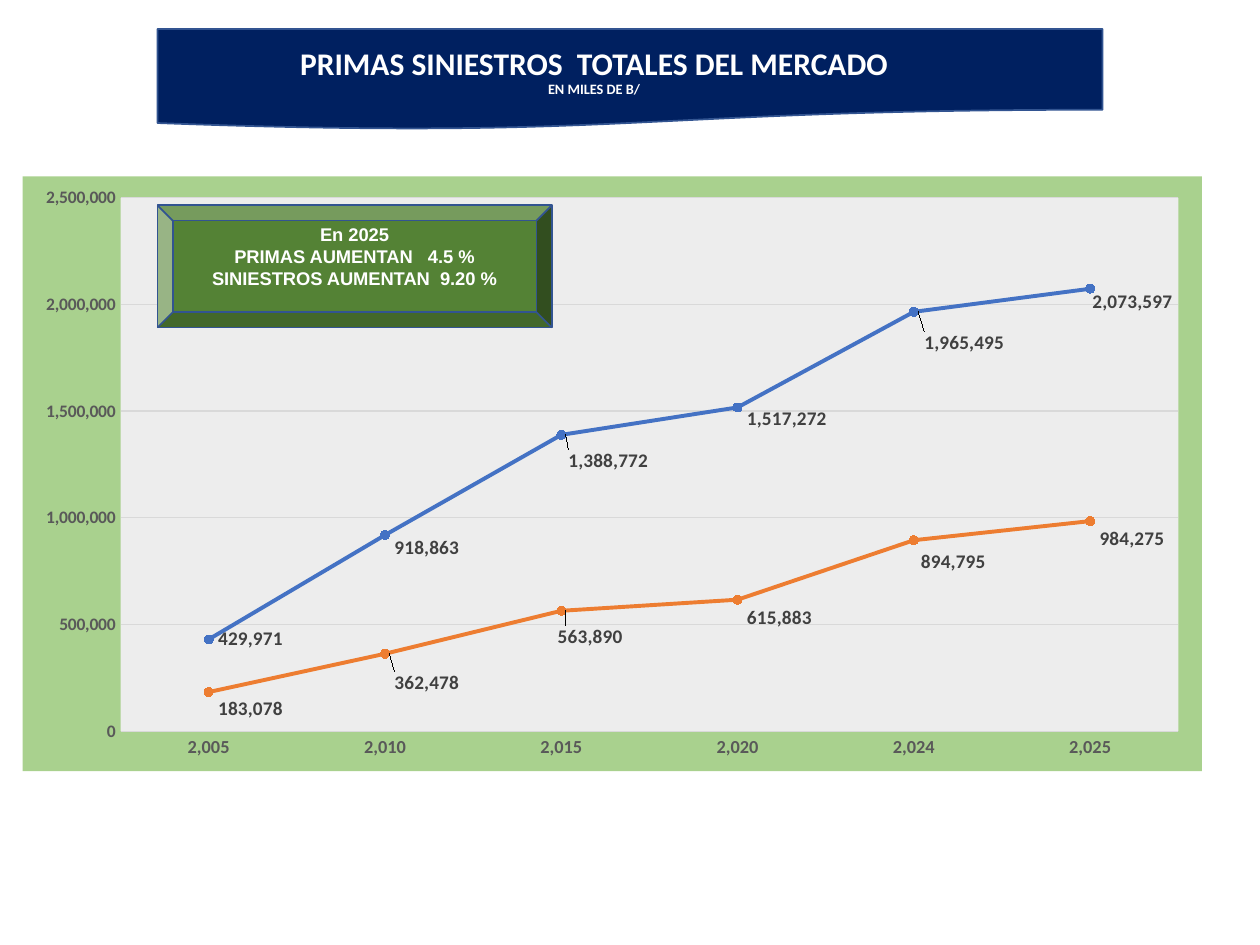
from lxml import etree
from pptx import Presentation
from pptx.chart.data import CategoryChartData
from pptx.dml.color import RGBColor
from pptx.enum.chart import (XL_CHART_TYPE, XL_LABEL_POSITION,
                             XL_MARKER_STYLE, XL_TICK_MARK)
from pptx.enum.shapes import MSO_SHAPE
from pptx.enum.text import MSO_ANCHOR, PP_ALIGN
from pptx.oxml.ns import qn
from pptx.util import Inches, Pt

LINES = XL_CHART_TYPE.LINE_MARKERS
RIGHT = XL_LABEL_POSITION.RIGHT
CIRCLE = XL_MARKER_STYLE.CIRCLE
NO_TICK = XL_TICK_MARK.NONE
WAVE, BEVEL = MSO_SHAPE.FLOWCHART_DOCUMENT, MSO_SHAPE.BEVEL
MIDDLE, CENTER = MSO_ANCHOR.MIDDLE, PP_ALIGN.CENTER

NAVY = RGBColor(0x00, 0x20, 0x60)
EDGE = RGBColor(0x32, 0x54, 0x91)
GREEN = RGBColor(0x54, 0x82, 0x35)
LIME = RGBColor(0xA9, 0xD1, 0x8E)
PALE = RGBColor(0xED, 0xED, 0xED)
GRID = RGBColor(0xD9, 0xD9, 0xD9)
GRAY = RGBColor(0x59, 0x59, 0x59)
DARK = RGBColor(0x40, 0x40, 0x40)
BLUE = RGBColor(0x44, 0x72, 0xC4)
ORANGE = RGBColor(0xED, 0x7D, 0x31)
WHITE = RGBColor(0xFF, 0xFF, 0xFF)

WIDE, HIGH = 9.36, 4.72  # chart size in inches
COMMAS = "#,##0"


def write(par, text, size, font="Calibri", color=WHITE):
    par.alignment = CENTER
    run = par.add_run()
    run.text = text
    run.font.name, run.font.size, run.font.bold = font, Pt(size), True
    run.font.color.rgb = color


def place(parent, spot, **parts):
    """Put a manual layout in a chart part, at the given child index."""
    for old in parent.findall(qn("c:layout")):
        parent.remove(old)
    layout = etree.Element(qn("c:layout"))
    manual = etree.SubElement(layout, qn("c:manualLayout"))
    for name, value in parts.items():
        etree.SubElement(manual, qn("c:" + name)).set("val", str(value))
    parent.insert(spot, layout)


prs = Presentation()
prs.slide_width, prs.slide_height = Inches(10), Inches(7.5)
slide = prs.slides.add_slide(prs.slide_layouts[5])
shapes = slide.shapes

# Banner and callout shapes
panels = []
for kind, fill, box in (
    (WAVE, NAVY, (1.25, 0.23, 7.5, 0.8)),
    (BEVEL, GREEN, (1.25, 1.63, 3.13, 0.97)),
):
    panel = shapes.add_shape(kind, *map(Inches, box))
    panel.shadow.inherit = False
    panel.fill.solid()
    panel.fill.fore_color.rgb = fill
    panel.line.color.rgb = EDGE
    panel.line.width = Pt(1)
    panels.append(panel)
callout = panels[1]

# Title, in front of the banner
title = shapes.title
title.left, title.top = Inches(1.54), Inches(0.23)
title.width, title.height = Inches(6.47), Inches(0.8)
shapes._spTree.append(title._element)
frame = title.text_frame
frame.word_wrap = True
frame.vertical_anchor = MIDDLE
frame.margin_right, frame.margin_bottom = Inches(0.22), Inches(0.15)
par = frame.paragraphs[0]
par.line_spacing = 0.9
write(par, "PRIMAS SINIESTROS  TOTALES DEL MERCADO", 18)
par.add_line_break()
write(par, "EN MILES DE B/", 8.2)

# Line chart; each label has a shift in inches from its default place
rows = (
    ("Series 1", BLUE,
     (429971, 918863, 1388772, 1517272, 1965495, 2073597),
     ((0, 0), (0, 0.1), (-0.02, 0.21), (0, 0.09), (0.01, 0.25), (-0.06, 0.11))),
    ("Series 2", ORANGE,
     (183078, 362478, 563890, 615883, 894795, 984275),
     ((0, 0.13), (0, 0.23), (-0.1, 0.21), (0, 0.14), (-0.02, 0.17), (0, 0.14))),
)
data = CategoryChartData(number_format=COMMAS)
data.categories = (2005, 2010, 2015, 2020, 2024, 2025)
data.categories.number_format = COMMAS
for name, color, values, shifts in rows:
    data.add_series(name, values)
holder = shapes.add_chart(LINES, Inches(0.18), Inches(1.4),
                          Inches(WIDE), Inches(HIGH), data)
chart = holder.chart
chart.has_legend = chart.has_title = False
chart.font.name, chart.font.size = "Calibri", Pt(10)
plot = chart.plots[0]
plot.vary_by_categories = False

# Chart and plot backgrounds
area = chart._chartSpace.chart.plotArea
place(area, 0, layoutTarget="inner", xMode="edge", yMode="edge",
      x=0.083, y=0.036, w=0.897, h=0.897)
for parent, color in ((area, PALE), (chart._chartSpace, LIME)):
    props = etree.Element(qn("c:spPr"))
    solid = etree.SubElement(props, qn("a:solidFill"))
    etree.SubElement(solid, qn("a:srgbClr")).set("val", str(color))
    line = etree.SubElement(props, qn("a:ln"))
    etree.SubElement(line, qn("a:noFill"))
    if parent is area:
        parent.append(props)
    else:
        chart._chartSpace.chart.addnext(props)

# Axes
years, amounts = chart.category_axis, chart.value_axis
for axis, size in ((years, 10.5), (amounts, 10)):
    axis.major_tick_mark = axis.minor_tick_mark = NO_TICK
    labels = axis.tick_labels
    labels.number_format, labels.number_format_is_linked = COMMAS, False
    font = labels.font
    font.name, font.size, font.bold = "Calibri", Pt(size), True
    font.color.rgb = GRAY
amounts.minimum_scale, amounts.maximum_scale = 0, 2500000
amounts.major_unit = 500000
amounts.format.line.fill.background()
for line in (years.format.line, amounts.major_gridlines.format.line):
    line.color.rgb = GRID
    line.width = Pt(0.75)

# Series and their labels
for series, (name, color, values, shifts) in zip(plot.series, rows):
    series.smooth = False
    series.format.line.color.rgb = color
    series.format.line.width = Pt(2.25)
    marker = series.marker
    marker.style, marker.size = CIRCLE, 5
    marker.format.fill.solid()
    marker.format.fill.fore_color.rgb = color
    marker.format.line.color.rgb = color
    labels = series.data_labels
    labels.show_value, labels.position = True, RIGHT
    labels.number_format, labels.number_format_is_linked = COMMAS, False
    tags = [series.points[i].data_label for i in range(len(values))]
    for tag in [labels] + tags:
        tag.position = RIGHT
        font = tag.font
        font.name, font.size, font.bold = "Calibri", Pt(11), True
        font.color.rgb = DARK
    nodes = labels._element.findall(qn("c:dLbl"))
    for node, (right, down) in zip(nodes, shifts):
        place(node, 1, x=round(right / WIDE, 3), y=round(down / HIGH, 3))

# Callout, in front of the chart
shapes._spTree.append(callout._element)
frame = callout.text_frame
frame.word_wrap = True
frame.vertical_anchor = MIDDLE
frame.margin_bottom = Inches(0.21)
for i, text in enumerate(("En 2025", "PRIMAS AUMENTAN   4.5 %",
                          "SINIESTROS AUMENTAN  9.20 %")):
    par = frame.add_paragraph() if i else frame.paragraphs[0]
    write(par, text, 10.5, font="Arial")

prs.save("out.pptx")
